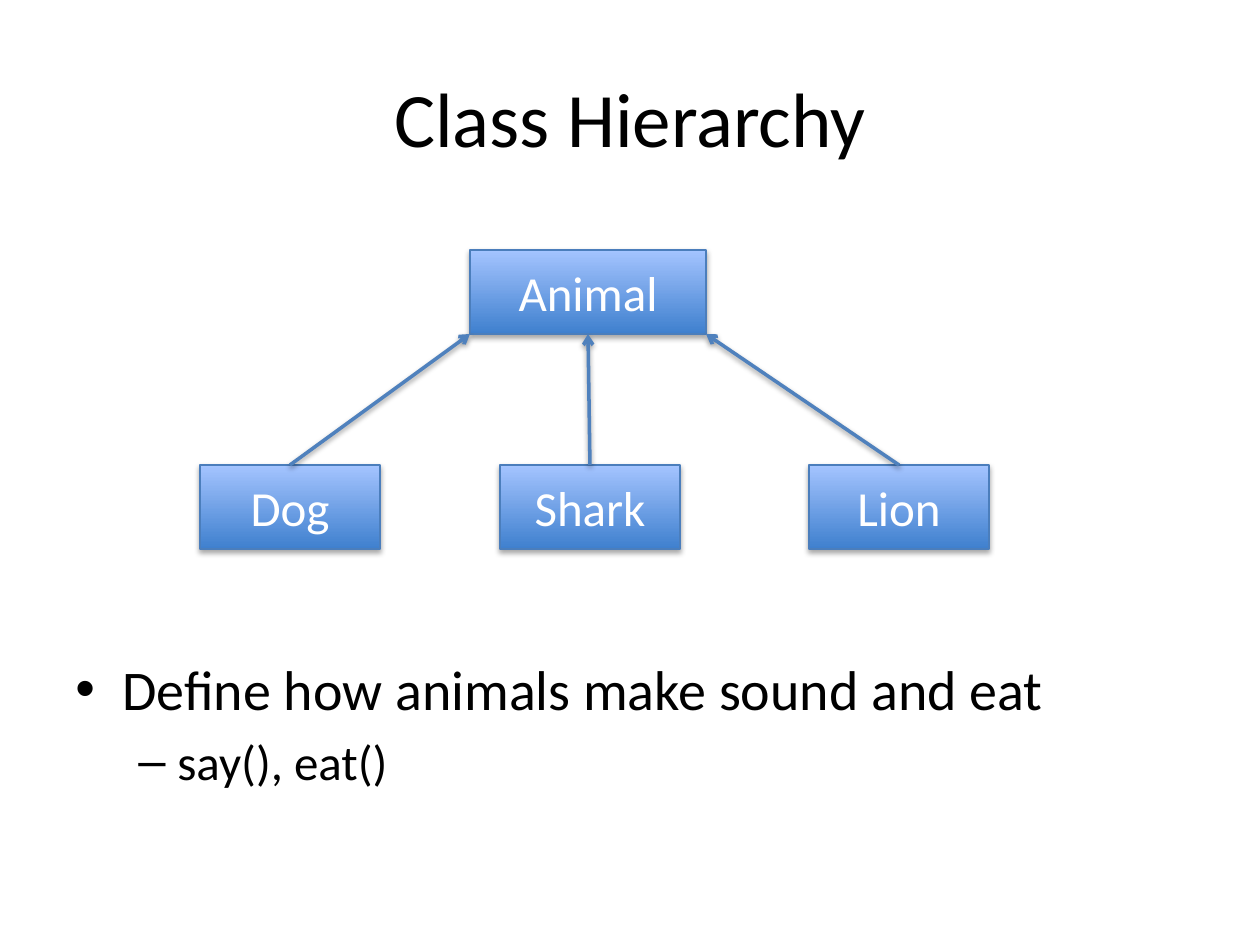
from lxml import etree
from pptx import Presentation, util as u
from pptx.dml.color import RGBColor
from pptx.enum import shapes, text
from pptx.oxml import parse_xml
from pptx.oxml.ns import nsdecls, qn

TITLE = "Class Hierarchy"
PARENT = ("Animal", (470, 250, 236, 84))
CHILDREN = [("Dog", 200), ("Shark", 500), ("Lion", 809)]
CHILD_TOP, CHILD_WIDTH, CHILD_HEIGHT = 465, 180, 84
BULLETS = [  # wording, size, bullet, left margin px, hanging indent px
    ("Define how animals make sound and eat", 32, "•", 47, 47),
    ("say(), eat()", 28, "–", 102, 39),
]
TITLE_BOX = (63, 38, 1134, 158)
BODY_BOX = (63, 648, 1134, 238)

THEME = {
    "font": "Calibri",
    "ink": "000000",
    "box_text": "FFFFFF",
    "box_bottom": "3F80CE",
    "box_top": "A4C4FF",
    "outline": "4B7EBC",
    "arrow": "4F81BD",
    "title_size": 44,
    "box_size": 28,
}


def px(value):
    return u.Emu(round(value * 914400 / 126))


def color(name):
    return RGBColor.from_string(THEME[name])


def write(paragraph, wording, size, ink, **formats):
    run = paragraph.add_run()
    run.text = wording
    for name, value in {"name": THEME["font"], "size": u.Pt(size)}.items():
        setattr(run.font, name, value)
    run.font.color.rgb = color(ink)
    for name, value in formats.items():
        setattr(paragraph, name, value)


def add_shadow(shape, distance, opacity):
    """Replace any effects with a soft shadow falling straight down."""
    properties = shape._element.spPr
    for effects in properties.findall(qn("a:effectLst")):
        properties.remove(effects)
    properties.append(parse_xml(
        f'<a:effectLst {nsdecls("a")}><a:outerShdw blurRad="40000" dist="{distance}" '
        f'dir="5400000" rotWithShape="0"><a:srgbClr val="000000">'
        f'<a:alpha val="{opacity * 1000}"/></a:srgbClr></a:outerShdw></a:effectLst>'))


def add_class_box(slide, name, box):
    shape = slide.shapes.add_shape(shapes.MSO_SHAPE.RECTANGLE, *map(px, box))
    shape.fill.gradient()
    shape.fill.gradient_angle = 90
    for stop, shade in zip(shape.fill.gradient_stops, ("box_bottom", "box_top")):
        stop.color.rgb = color(shade)
    shape.line.color.rgb = color("outline")
    shape.line.width = u.Pt(0.75)
    add_shadow(shape, 23000, 35)
    shape.text_frame.vertical_anchor = text.MSO_ANCHOR.MIDDLE
    write(shape.text_frame.paragraphs[0], name, THEME["box_size"], "box_text",
          alignment=text.PP_ALIGN.CENTER)
    return shape


def add_inheritance_arrow(slide, child, end):
    start = (child.left + child.width // 2, child.top)
    arrow = slide.shapes.add_connector(shapes.MSO_CONNECTOR.STRAIGHT, *start, *end)
    arrow.begin_connect(child, 0)
    arrow.line.color.rgb = color("arrow")
    arrow.line.width = u.Pt(2)
    etree.SubElement(arrow.line._get_or_add_ln(), qn("a:tailEnd"), type="arrow")
    add_shadow(arrow, 20000, 38)


def add_bullets(slide):
    frame = slide.shapes.add_textbox(*map(px, BODY_BOX)).text_frame
    frame.word_wrap = True
    for index, (wording, size, bullet, margin, hanging) in enumerate(BULLETS):
        paragraph = frame.add_paragraph() if index else frame.paragraphs[0]
        write(paragraph, wording, size, "ink", level=index,
              space_before=u.Pt(size * 0.2))
        properties = paragraph._p.get_or_add_pPr()
        properties.set("marL", str(px(margin)))
        properties.set("indent", str(-px(hanging)))
        etree.SubElement(properties, qn("a:buFont"), typeface="Arial")
        etree.SubElement(properties, qn("a:buChar"), char=bullet)


def main():
    presentation = Presentation()
    presentation.slide_width, presentation.slide_height = px(1260), px(945)
    slide = presentation.slides.add_slide(presentation.slide_layouts[5])

    title = slide.shapes.title
    for side, value in zip(("left", "top", "width", "height"), TITLE_BOX):
        setattr(title, side, px(value))
    title.text_frame.vertical_anchor = text.MSO_ANCHOR.MIDDLE
    write(title.text_frame.paragraphs[0], TITLE, THEME["title_size"], "ink",
          alignment=text.PP_ALIGN.CENTER)

    parent = add_class_box(slide, *PARENT)
    children = [add_class_box(slide, name, (left, CHILD_TOP, CHILD_WIDTH, CHILD_HEIGHT))
                for name, left in CHILDREN]
    # Arrows meet the parent's bottom edge at its left, middle and right.
    for index, child in enumerate(children):
        end_x = parent.left + parent.width * index // (len(children) - 1)
        add_inheritance_arrow(slide, child, (end_x, parent.top + parent.height))
    add_bullets(slide)

    presentation.save("out.pptx")


if __name__ == "__main__":
    main()
